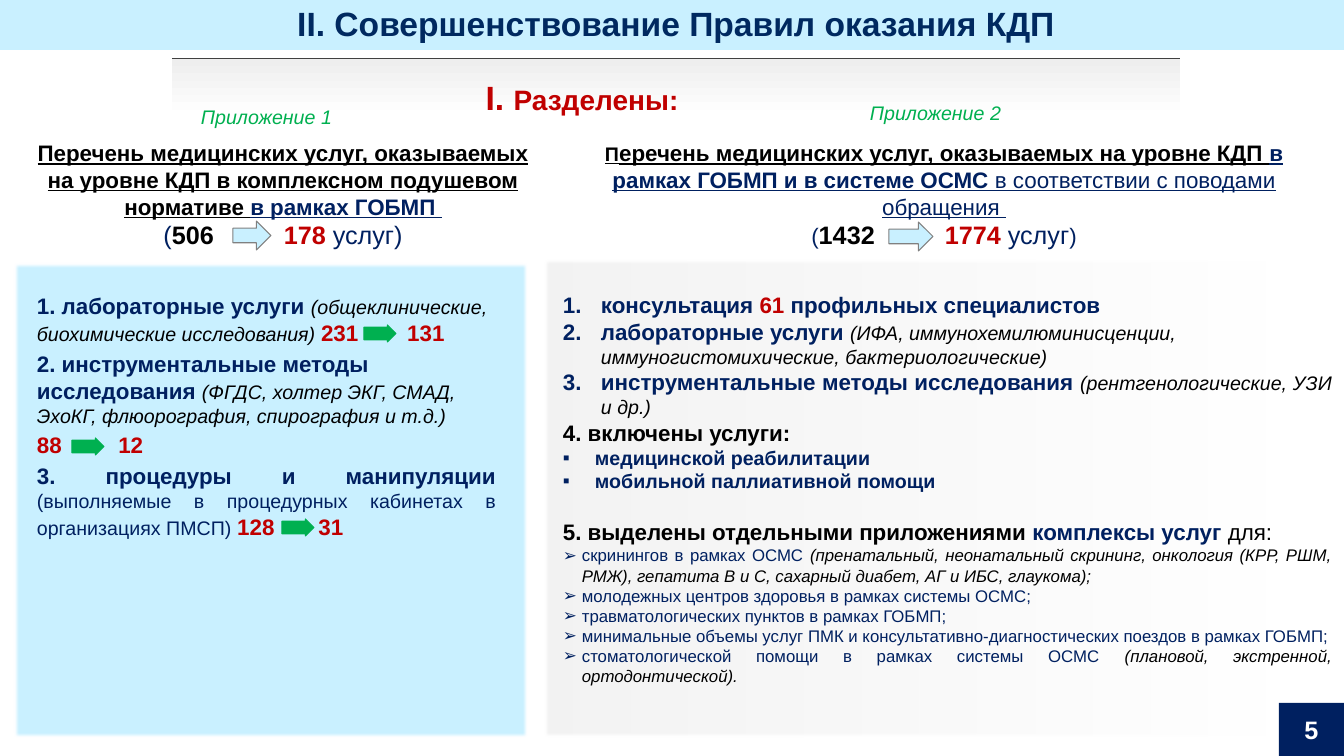
from pptx import Presentation
from pptx.dml.color import RGBColor
from pptx.enum.shapes import MSO_CONNECTOR, MSO_SHAPE
from pptx.enum.text import MSO_ANCHOR, PP_ALIGN
from pptx.oxml.ns import qn
from pptx.util import Pt
from lxml import etree

RECT, ARROW = MSO_SHAPE.RECTANGLE, MSO_SHAPE.RIGHT_ARROW
LEFT, CENTER, JUSTIFY = PP_ALIGN.LEFT, PP_ALIGN.CENTER, PP_ALIGN.JUSTIFY
PX = 914400 / 100.8
NAVY, RED, BLACK, GREEN, SKY = "002060", "C00000", "000000", "00B050", "C9F0FF"


def color(value):
    return RGBColor.from_string(value)


def write(frame, paragraphs, inset_top=5):
    """Paragraph: (align, options, spans); span: (text, size, colour, style[, gap in points])."""
    frame.word_wrap = True
    frame.margin_top = round(inset_top * PX)
    for index, (align, options, spans) in enumerate(paragraphs):
        para = frame.paragraphs[0] if index == 0 else frame.add_paragraph()
        para.alignment = align
        para.font.name = "Arial"
        para.space_before = Pt(options.get("before", 0))
        para.space_after = Pt(options.get("after", 0))
        if "bullet" in options:
            bullet, indent = options["bullet"]
            properties = para._p.get_or_add_pPr()
            properties.set("marL", str(round(indent * PX)))
            properties.set("indent", str(-round(indent * PX)))
            mark = (("buAutoNum", "type", "arabicPeriod") if bullet == "1."
                    else ("buChar", "char", bullet))
            font = etree.Element(qn("a:buFont"), typeface="Arial")
            sign = etree.Element(qn("a:" + mark[0]), {mark[1]: mark[2]})
            defaults = properties.find(qn("a:defRPr"))
            defaults.addprevious(font)
            defaults.addprevious(sign)
        for text, size, tint, style, *gap in spans:
            span = para.add_run()
            span.text = text
            span.font.size = Pt(size)
            span.font.color.rgb = color(tint)
            span.font.bold = "b" in style
            span.font.italic = "i" in style
            span.font.underline = "u" in style
            if gap:
                span._r.get_or_add_rPr().set("spc", str(gap[0] * 100))


deck = Presentation()
deck.slide_width, deck.slide_height = round(1344 * PX), round(756 * PX)
page = deck.slides.add_slide(deck.slide_layouts[5])

# Filled shapes: kind, box, fill (two colours make a gradient), angle, line, soft edge
shapes = [
    (RECT, (0, 0, 1344, 50), [SKY], 0, None, False),
    (RECT, (545, 260, 749, 478), ["F2F2F2", "FFFFFF"], 0, None, True),
    (RECT, (172, 59, 1008, 58), ["EEEEEE", "FFFFFF"], 270, None, False),
    (RECT, (14, 263, 514, 475), [SKY], 0, None, True),
    (ARROW, (233, 221, 38, 29), [SKY], 0, "808080", False),
    (ARROW, (889, 222, 44, 29), [SKY], 0, "808080", False),
    (ARROW, (364, 325, 32, 17), [GREEN], 0, GREEN, False),
    (ARROW, (72, 438, 32, 17), [GREEN], 0, GREEN, False),
    (ARROW, (282, 519, 32, 17), [GREEN], 0, GREEN, False),
    (RECT, (1279, 703, 65, 53), [NAVY], 0, None, False),
]
for kind, box, tints, angle, outline, soft in shapes:
    shape = page.shapes.add_shape(kind, *[round(v * PX) for v in box])
    shape.shadow.inherit = False
    if soft:
        effects = shape._element.spPr.find(qn("a:effectLst"))
        etree.SubElement(effects, qn("a:softEdge"), rad="31750")
    if len(tints) == 2:
        shape.fill.gradient()
        shape.fill.gradient_angle = angle
        for stop, tint in zip(shape.fill.gradient_stops, tints):
            stop.color.rgb = color(tint)
    else:
        shape.fill.solid()
        shape.fill.fore_color.rgb = color(tints[0])
    if outline:
        shape.line.color.rgb = color(outline)
        shape.line.width = Pt(0.75)
    else:
        shape.line.fill.background()
    if outline == GREEN:
        shape.adjustments[0] = 0.747

# Page number sits in the last shape
number = shape.text_frame
number.vertical_anchor = MSO_ANCHOR.MIDDLE
write(number, [(CENTER, {}, [("5", 18, "FFFFFF", "b")])])

# Rule above the section heading
rule = page.shapes.add_connector(
    MSO_CONNECTOR.STRAIGHT, *[round(v * PX) for v in (172, 59, 1180, 59)])
rule.line.color.rgb = color("404040")
rule.line.width = Pt(0.75)
etree.SubElement(rule._element.spPr, qn("a:effectLst"))

# Title, brought in front of its band
title = page.shapes.title
title.left, title.top, title.width, title.height = [round(v * PX) for v in (47, 3, 1258, 40)]
rule._element.addnext(title._element)
heading = title.text_frame
heading.margin_left = heading.margin_right = heading.margin_bottom = 0
heading.vertical_anchor = MSO_ANCHOR.MIDDLE
write(heading, [(CENTER, {}, [("II. Совершенствование Правил оказания КДП", 24, "002960", "b")])], 0)

# Text blocks
section = [(CENTER, {}, [("I. ", 24, RED, "b"), ("Разделены:", 20, RED, "b")])]
list_one = [
    (CENTER, {}, [
        ("Перечень медицинских услуг, оказываемых на уровне КДП в комплексном подушевом нормативе ",
         16, BLACK, "bu"),
        ("в рамках ГОБМП ", 16, NAVY, "bu")]),
    (CENTER, {}, [("(", 18, NAVY, ""), ("506", 18, BLACK, "b"), (" ", 18, BLACK, "b", 45),
                  ("178 ", 18, RED, "b"), ("услуг)", 18, NAVY, "")]),
]
list_two = [
    (CENTER, {}, [
        ("П", 14, BLACK, "bu"),
        ("еречень медицинских услуг, оказываемых на уровне КДП ", 16, BLACK, "bu"),
        ("в рамках ГОБМП и в системе ОСМС ", 16, NAVY, "bu"),
        ("в соответствии с поводами обращения ", 16, NAVY, "u")]),
    (CENTER, {}, [("(", 16, NAVY, ""), ("1432", 18, BLACK, "b"), (" ", 18, BLACK, "b", 45),
                  ("1774 ", 18, RED, "b"), ("услуг", 18, NAVY, ""), (")", 16, NAVY, "")]),
]
spaced = {"after": 3}
services_one = [
    (LEFT, spaced, [
        ("1. лабораторные услуги ", 16, NAVY, "b"),
        ("(общеклинические, биохимические исследования) ", 14, BLACK, "i"),
        ("231", 16, RED, "b"), (" ", 14, BLACK, "i", 31), ("131", 16, RED, "b")]),
    (LEFT, spaced, [
        ("2. инструментальные методы исследования ", 16, NAVY, "b"),
        ("(ФГДС, холтер ЭКГ, СМАД, ЭхоКГ, флюорография, спирография и т.д.)", 14, BLACK, "i")]),
    (LEFT, spaced, [("88", 16, RED, "b"), (" ", 16, RED, "b", 36), ("12", 16, RED, "b")]),
    (JUSTIFY, spaced, [
        ("3. процедуры и манипуляции ", 16, NAVY, "b"),
        ("(выполняемые в процедурных кабинетах в организациях ПМСП) ", 14, NAVY, ""),
        ("128", 16, RED, "b"), (" ", 16, RED, "b", 27), ("31", 16, RED, "b")]),
]
numbered, square, pointer = [{"bullet": b} for b in (("1.", 38), ("▪", 32), ("➢", 19))]
services_two = [
    (LEFT, numbered, [("консультация ", 16, NAVY, "b"), ("61 ", 16, RED, "b"),
                      ("профильных специалистов", 16, NAVY, "b")]),
    (LEFT, numbered, [
        ("лабораторные услуги ", 16, NAVY, "b"),
        ("(ИФА, иммунохемилюминисценции, иммуногистомихические, бактериологические)",
         14, BLACK, "i")]),
    (JUSTIFY, numbered, [("инструментальные методы исследования ", 16, NAVY, "b"),
                         ("(рентгенологические, УЗИ и др.)", 14, BLACK, "i")]),
    (LEFT, {}, [("4. включены услуги:", 16, BLACK, "b")]),
    (LEFT, square, [("медицинской реабилитации", 14, NAVY, "b")]),
    (LEFT, square, [("мобильной паллиативной помощи", 14, NAVY, "b")]),
    (LEFT, {"before": 18.4}, [("5. выделены отдельными приложениями ", 16, BLACK, "b"),
                              ("комплексы услуг ", 16, NAVY, "b"), ("для:", 16, BLACK, "")]),
    (JUSTIFY, pointer, [
        ("скринингов в рамках ОСМС ", 12, NAVY, ""),
        ("(пренатальный, неонатальный скрининг, онкология (КРР, РШМ, РМЖ), гепатита В и С, "
         "сахарный диабет, АГ и ИБС, глаукома);", 12, BLACK, "i")]),
    (JUSTIFY, pointer, [("молодежных центров здоровья в рамках системы ОСМС;", 12, NAVY, "")]),
    (JUSTIFY, pointer, [("травматологических пунктов в рамках ГОБМП;", 12, NAVY, "")]),
    (JUSTIFY, pointer, [
        ("минимальные объемы услуг ПМК и консультативно-диагностических поездов в рамках ГОБМП;",
         12, NAVY, "")]),
    (JUSTIFY, pointer, [("стоматологической помощи в рамках системы ОСМС ", 12, NAVY, ""),
                        ("(плановой, экстренной, ортодонтической).", 12, BLACK, "i")]),
]
blocks = [
    ((13, 134, 540, 146), list_one, 5),
    ((594, 134, 700, 146), list_two, 5),
    ((27, 260, 479, 320), services_one, 32),
    ((553, 260, 789, 437), services_two, 31),
    ((364, 72, 436, 50), section, 5),
    ((191, 100, 215, 34), [(LEFT, {}, [("Приложение 1", 14, GREEN, "i")])], 5),
    ((860, 96, 215, 34), [(LEFT, {}, [("Приложение 2", 14, GREEN, "i")])], 5),
]
for box, paragraphs, inset_top in blocks:
    text_box = page.shapes.add_textbox(*[round(v * PX) for v in box])
    write(text_box.text_frame, paragraphs, inset_top)

deck.save("out.pptx")
